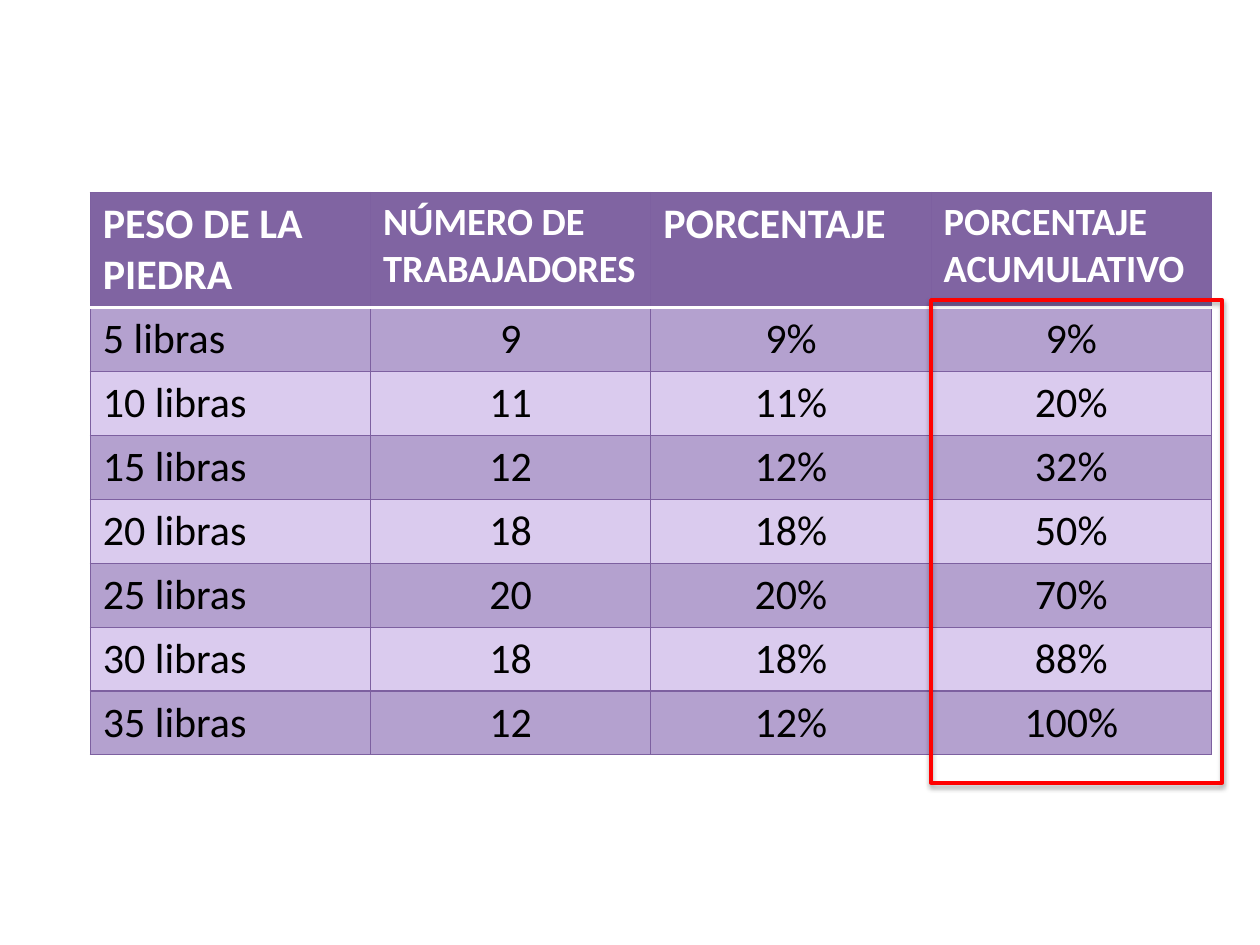
from lxml.etree import SubElement
from pptx import Presentation
from pptx.dml.color import RGBColor
from pptx.enum.shapes import MSO_SHAPE as Shape
from pptx.enum.text import PP_ALIGN as Align
from pptx.oxml.ns import qn
from pptx.util import Cm, Pt

PURPLE = RGBColor(0x80, 0x64, 0xA2)
BORDER = RGBColor(0x7D, 0x60, 0xA0)
BAND_DARK = RGBColor(0xB4, 0xA1, 0xCF)
BAND_LIGHT = RGBColor(0xDA, 0xCB, 0xEE)
WHITE = RGBColor(0xFF, 0xFF, 0xFF)
BLACK = RGBColor(0, 0, 0)
RED = RGBColor(0xFF, 0, 0)

HEADINGS = [
    ("PESO DE LA PIEDRA", 24),
    ("NÚMERO DE TRABAJADORES", 22),
    ("PORCENTAJE", 24),
    ("PORCENTAJE ACUMULATIVO", 22),
]
WEIGHTS = [
    ("5 libras", "9", "9%", "9%"),
    ("10 libras", "11", "11%", "20%"),
    ("15 libras", "12", "12%", "32%"),
    ("20 libras", "18", "18%", "50%"),
    ("25 libras", "20", "20%", "70%"),
    ("30 libras", "18", "18%", "88%"),
    ("35 libras", "12", "12%", "100%"),
]
LEFT, TOP = 1.82, 3.88
COLUMN_WIDTH, HEADING_HEIGHT, ROW_HEIGHT = 5.65, 2.18, 1.28


def add_effect(parent, tag, **attributes):
    return SubElement(parent, qn(tag), {k: str(v) for k, v in attributes.items()})


def set_border(cell, side, color, points):
    line = add_effect(cell._tc.get_or_add_tcPr(), f"a:ln{side}", w=Pt(points))
    add_effect(add_effect(line, "a:solidFill"), "a:srgbClr", val=color)


def style_cell(cell, text, size, color, bold, fill, align, rule_side):
    for side in "LRTB":
        if side == rule_side:
            set_border(cell, side, WHITE, 2)
        else:
            set_border(cell, side, BORDER, 0.75)
    cell.fill.solid()
    cell.fill.fore_color.rgb = fill
    paragraph = cell.text_frame.paragraphs[0]
    paragraph.text = text
    paragraph.alignment = align
    font = paragraph.runs[0].font
    font.name, font.size, font.bold = "Calibri", Pt(size), bold
    font.color.rgb = color


def add_weights(slide):
    rows, columns = len(WEIGHTS) + 1, len(HEADINGS)
    weights = slide.shapes.add_table(
        rows, columns, Cm(LEFT), Cm(TOP), Cm(COLUMN_WIDTH * columns),
        Cm(HEADING_HEIGHT + ROW_HEIGHT * len(WEIGHTS))).table
    for column in weights.columns:
        column.width = Cm(COLUMN_WIDTH)
    for r, row in enumerate(weights.rows):
        row.height = Cm(ROW_HEIGHT if r else HEADING_HEIGHT)
    for c, (heading, size) in enumerate(HEADINGS):
        style_cell(weights.cell(0, c), heading, size, WHITE, True, PURPLE, Align.LEFT, "B")
    for r, values in enumerate(WEIGHTS, 1):
        band = BAND_DARK if r % 2 else BAND_LIGHT
        for c, value in enumerate(values):
            style_cell(weights.cell(r, c), value, 24, BLACK, False, band,
                       Align.CENTER if c else Align.LEFT, "T" if r == 1 else None)


def add_highlight(slide):
    highlight = slide.shapes.add_shape(
        Shape.RECTANGLE, Cm(18.77), Cm(6.05), Cm(5.87), Cm(9.73))
    highlight.fill.background()
    highlight.line.color.rgb = RED
    highlight.line.width = Pt(2.25)
    highlight.shadow.inherit = False
    effects = highlight._element.spPr.find(qn("a:effectLst"))
    shadow = add_effect(effects, "a:outerShdw", blurRad=Pt(3.1), dist=Pt(1.8),
                        dir=90 * 60000, rotWithShape=0)
    add_effect(add_effect(shadow, "a:srgbClr", val=BLACK), "a:alpha", val=35000)


def main():
    deck = Presentation()
    deck.slide_width, deck.slide_height = Cm(25.4), Cm(19.05)
    slide = deck.slides.add_slide(deck.slide_layouts[6])
    add_weights(slide)
    add_highlight(slide)
    deck.save("out.pptx")


if __name__ == "__main__":
    main()
